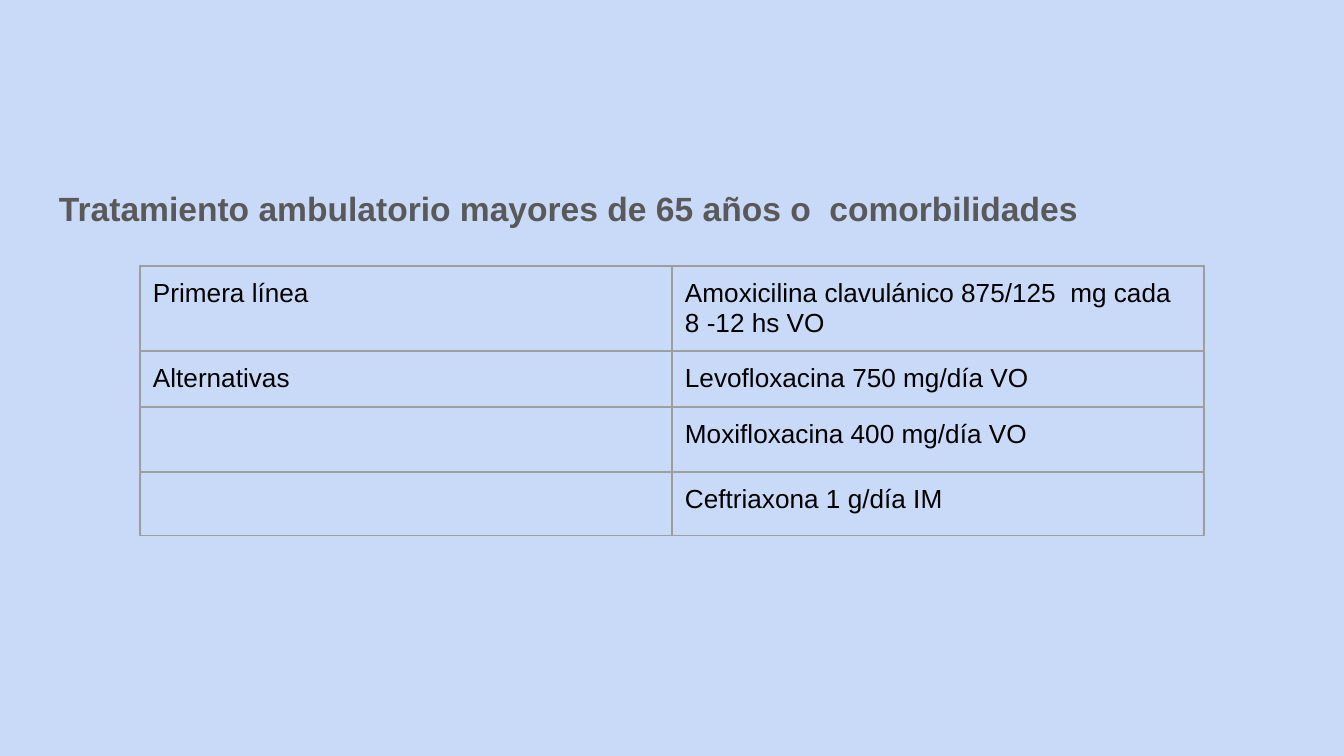
from lxml import etree
from pptx import Presentation
from pptx.dml.color import RGBColor
from pptx.enum.text import MSO_ANCHOR, MSO_AUTO_SIZE, PP_ALIGN
from pptx.oxml.ns import qn
from pptx.util import Pt

LEFT, TOP, NO_FIT = PP_ALIGN.LEFT, MSO_ANCHOR.TOP, MSO_AUTO_SIZE.NONE

# Content
TITLE = "Tratamiento ambulatorio mayores de 65 años o  comorbilidades"
TREATMENTS = [
    ("Primera línea", "Amoxicilina clavulánico 875/125  mg cada 8 -12 hs VO"),
    ("Alternativas", "Levofloxacina 750 mg/día VO"),
    ("", "Moxifloxacina 400 mg/día VO"),
    ("", "Ceftriaxona 1 g/día IM"),
]

# Layout in px
SLIDE_SIZE = (1344, 756)
TITLE_BOX = (46, 169, 1252, 503)
TABLE_LEFT, TABLE_TOP = 140, 266
COLUMN_WIDTH = 532
ROW_HEIGHTS = [85, 56, 65, 64]
INSET = 13
EMU_PER_PX = 914400 / 134.4

FONT = "Arial"
COLORS = {"background": "C9DAF8", "title": "595959", "text": "000000", "border": "9E9E9E"}


def px(length):
    return round(length * EMU_PER_PX)


def color(name):
    return RGBColor.from_string(COLORS[name])


def style_font(font, size, color_name, bold=False):
    font.name, font.size, font.bold = FONT, Pt(size), bold
    font.color.rgb = color(color_name)


def set_margins(target):
    target.margin_left = target.margin_right = px(INSET)
    target.margin_top = target.margin_bottom = px(INSET)


def add_borders(cell):
    properties = cell._tc.get_or_add_tcPr()
    for index, side in enumerate(("a:lnL", "a:lnR", "a:lnT", "a:lnB")):
        line = etree.Element(qn(side), w=str(Pt(0.75)))
        fill = etree.SubElement(line, qn("a:solidFill"))
        etree.SubElement(fill, qn("a:srgbClr"), val=COLORS["border"])
        properties.insert(index, line)


# Slide and background
presentation = Presentation()
presentation.slide_width, presentation.slide_height = map(px, SLIDE_SIZE)
slide = presentation.slides.add_slide(presentation.slide_layouts[5])
slide.background.fill.solid()
slide.background.fill.fore_color.rgb = color("background")

# Title
title = slide.shapes.title
title.left, title.top, title.width, title.height = map(px, TITLE_BOX)
frame = title.text_frame
frame.text = TITLE
frame.word_wrap, frame.auto_size, frame.vertical_anchor = True, NO_FIT, TOP
set_margins(frame)
paragraph = frame.paragraphs[0]
paragraph.alignment, paragraph.line_spacing = LEFT, 1.15
style_font(paragraph.font, 18, "title", bold=True)

# Treatment table
column_count = len(TREATMENTS[0])
table = slide.shapes.add_table(
    len(TREATMENTS), column_count, px(TABLE_LEFT), px(TABLE_TOP),
    px(COLUMN_WIDTH * column_count), px(sum(ROW_HEIGHTS))).table
table.first_row = table.horz_banding = False
for column in table.columns:
    column.width = px(COLUMN_WIDTH)
for row, height, texts in zip(table.rows, ROW_HEIGHTS, TREATMENTS):
    row.height = px(height)
    for cell, text in zip(row.cells, texts):
        cell.text = text
        cell.vertical_anchor = TOP
        set_margins(cell)
        cell.fill.background()
        add_borders(cell)
        style_font(cell.text_frame.paragraphs[0].font, 14, "text")

presentation.save("out.pptx")
